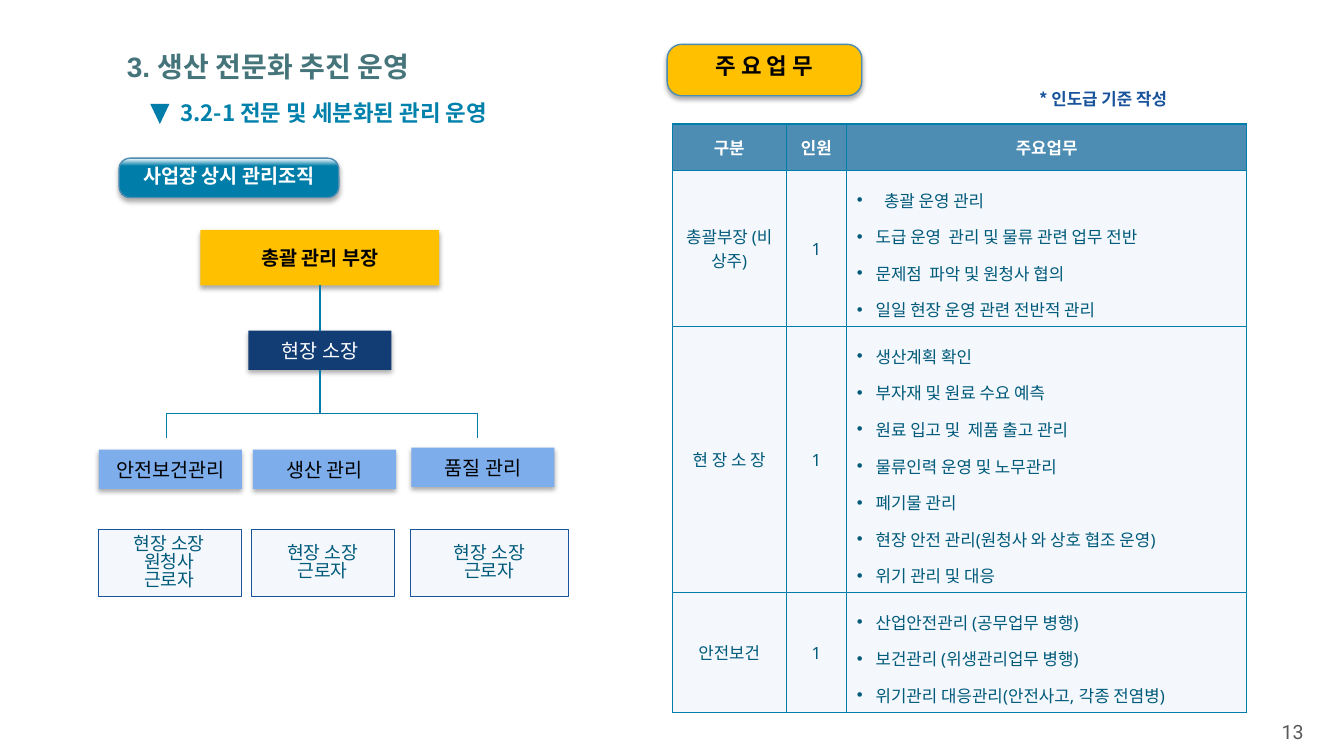
from dataclasses import dataclass

from lxml.etree import SubElement
from pptx import Presentation
from pptx.dml.color import RGBColor
from pptx.enum.shapes import MSO_CONNECTOR, MSO_SHAPE
from pptx.enum.text import MSO_ANCHOR, PP_ALIGN
from pptx.oxml.ns import qn
from pptx.util import Pt


@dataclass(frozen=True)
class Theme:
    teal: str = "007DA9"
    steel: str = "4D8CB3"
    navy: str = "123D74"
    blue: str = "19539C"
    sky: str = "7DADEB"
    pale: str = "F4F7FC"
    amber: str = "FFC000"
    ink: str = "005A7A"
    title: str = "45747A"
    subtitle: str = "0081AB"
    gray: str = "595959"
    black: str = "000000"
    white: str = "FFFFFF"
    korean: str = "Noto Sans CJK KR"
    body: str = "Noto Sans"
    title_size: float = 20
    heading_size: float = 16
    box_size: float = 14
    staff_size: float = 13
    table_size: float = 12


THEME = Theme()

DEPARTMENTS = [  # name, left, top
    ("안전보건관리", 70.6, 321.1),
    ("생산 관리", 180.7, 321.1),
    ("품질 관리", 293.8, 319.7),
]
STAFF = [  # lines, left, width
    (["현장 소장", "원청사", "근로자"], 69.8, 102.2),
    (["현장 소장", "근로자"], 179.3, 102.2),
    (["현장 소장", "근로자"], 293, 113),
]
HEADERS = ["구분", "인원", "주요업무"]
DUTIES = [
    ("총괄부장 (비 상주)", "1", ["총괄 운영 관리", "도급 운영  관리 및 물류 관련 업무 전반",
                          "문제점  파악 및 원청사 협의", "일일 현장 운영 관련 전반적 관리"]),
    ("현 장 소 장", "1", ["생산계획 확인", "부자재 및 원료 수요 예측", "원료 입고 및  제품 출고 관리",
                      "물류인력 운영 및 노무관리", "폐기물 관리",
                      "현장 안전 관리(원청사 와 상호 협조 운영)", "위기 관리 및 대응"]),
    ("안전보건", "1", ["산업안전관리 (공무업무 병행)", "보건관리 (위생관리업무 병행)",
                   "위기관리 대응관리(안전사고, 각종 전염병)"]),
]
COLUMN_WIDTHS = [81.4, 43.2, 285.8]
ROW_HEIGHTS = [33.1, 111.6, 190, 85.7]


def rgb(color):
    return RGBColor.from_string(color)


def write(frame, lines, size, color, bold=False, font=THEME.korean,
          align=PP_ALIGN.CENTER, spacing=None):
    for index, line in enumerate(lines):
        paragraph = frame.paragraphs[0] if index == 0 else frame.add_paragraph()
        paragraph.alignment = align
        if spacing:
            paragraph.line_spacing = spacing
        run = paragraph.add_run()
        run.text = line
        run.font.size = Pt(size)
        run.font.bold = bold
        run.font.name = font
        run.font.color.rgb = rgb(color)
        east_asian = SubElement(run.font._element, qn("a:ea"))
        east_asian.set("typeface", THEME.korean)


def add_label(slide, area, text, size, color, bold=True, font=THEME.korean,
              align=PP_ALIGN.LEFT, anchor=MSO_ANCHOR.TOP, spacing=None):
    frame = slide.shapes.add_textbox(*map(Pt, area)).text_frame
    frame.word_wrap = True
    frame.vertical_anchor = anchor
    write(frame, [text], size, color, bold, font, align, spacing)


def add_shadow(shape):
    effects = shape._element.spPr.find(qn("a:effectLst"))
    shadow = SubElement(effects, qn("a:outerShdw"), blurRad=str(Pt(3.5)),
                        dist=str(Pt(2.2)), dir="5400000", rotWithShape="0")
    color = SubElement(shadow, qn("a:srgbClr"), val=THEME.black)
    SubElement(color, qn("a:alpha"), val="32000")


def add_box(slide, area, fill, line=None, line_width=1, kind=MSO_SHAPE.RECTANGLE, shadow=True):
    shape = slide.shapes.add_shape(kind, *map(Pt, area))
    shape.shadow.inherit = False
    shape.fill.solid()
    shape.fill.fore_color.rgb = rgb(fill)
    if line:
        shape.line.color.rgb = rgb(line)
        shape.line.width = Pt(line_width)
    else:
        shape.line.fill.background()
    if shadow:
        add_shadow(shape)
    shape.text_frame.word_wrap = True
    shape.text_frame.vertical_anchor = MSO_ANCHOR.MIDDLE
    return shape


def add_badge(slide, area, text, size, color, fill):
    badge = add_box(slide, area, fill, THEME.steel, kind=MSO_SHAPE.ROUNDED_RECTANGLE)
    badge.adjustments[0] = 0.28
    write(badge.text_frame, [text], size, color, bold=True, spacing=Pt(13))
    return badge


def add_link(slide, upper, lower=None, end=(0, 0)):
    link = slide.shapes.add_connector(MSO_CONNECTOR.STRAIGHT, 0, 0, *map(Pt, end))
    link.begin_connect(upper, 2)
    if lower is not None:
        link.end_connect(lower, 0)
    link.line.color.rgb = rgb(THEME.teal)
    link.line.width = Pt(1)
    SubElement(link._element.spPr, qn("a:effectLst"))


def add_bracket(slide, left, right, top, bottom):
    builder = slide.shapes.build_freeform(Pt(left), Pt(bottom))
    corners = [(left, top), (right, top), (right, bottom)]
    builder.add_line_segments([(Pt(x), Pt(y)) for x, y in corners], close=False)
    bracket = builder.convert_to_shape()
    bracket.shadow.inherit = False
    bracket.fill.background()
    bracket.line.color.rgb = rgb(THEME.teal)
    bracket.line.width = Pt(1)


def add_bullet(paragraph, indent):
    properties = paragraph._p.get_or_add_pPr()
    properties.set("marL", str(Pt(indent)))
    properties.set("indent", str(-Pt(indent)))
    SubElement(properties, qn("a:buFont"), typeface="Arial")
    SubElement(properties, qn("a:buChar"), char="•")


def style_cell(cell, fill):
    cell.vertical_anchor = MSO_ANCHOR.MIDDLE
    properties = cell._tc.get_or_add_tcPr()
    for side in ("a:lnL", "a:lnR", "a:lnT", "a:lnB"):
        border = SubElement(properties, qn(side), w=str(Pt(1)))
        SubElement(SubElement(border, qn("a:solidFill")), qn("a:srgbClr"), val=THEME.teal)
    cell.fill.solid()
    cell.fill.fore_color.rgb = rgb(fill)


def add_duty_table(slide):
    area = (480.2, 88.6, sum(COLUMN_WIDTHS), sum(ROW_HEIGHTS))
    table = slide.shapes.add_table(len(ROW_HEIGHTS), len(HEADERS), *map(Pt, area)).table
    table.horz_banding = False
    for column, width in zip(table.columns, COLUMN_WIDTHS):
        column.width = Pt(width)
    for row, height in zip(table.rows, ROW_HEIGHTS):
        row.height = Pt(height)
    for index, header in enumerate(HEADERS):
        cell = table.cell(0, index)
        style_cell(cell, THEME.steel)
        write(cell.text_frame, [header], THEME.table_size, THEME.white, True, THEME.body)
    for row, (role, count, duties) in enumerate(DUTIES, start=1):
        for index, lines in enumerate([[role], [count], duties]):
            cell = table.cell(row, index)
            style_cell(cell, THEME.pale)
            is_duty = lines is duties
            write(cell.text_frame, lines, THEME.table_size, THEME.ink, font=THEME.body,
                  align=PP_ALIGN.LEFT if is_duty else PP_ALIGN.CENTER,
                  spacing=1.5 if is_duty else None)
            if is_duty:
                for paragraph in cell.text_frame.paragraphs:
                    add_bullet(paragraph, 13.5)
    # The first duty is set a little further in
    add_bullet_indent = table.cell(1, 2).text_frame.paragraphs[0]._p.pPr
    add_bullet_indent.set("marL", str(Pt(19.5)))
    add_bullet_indent.set("indent", str(-Pt(19.5)))


def add_organization(slide):
    manager = add_box(slide, (143.2, 164.2, 170.6, 39.6), THEME.amber)
    write(manager.text_frame, ["총괄 관리 부장"], THEME.box_size, THEME.black, bold=True)
    site = add_box(slide, (177.4, 236.2, 102.2, 28.1), THEME.navy)
    write(site.text_frame, ["현장 소장"], THEME.box_size, THEME.white)
    add_link(slide, manager, site)
    add_link(slide, site, end=(228.5, 295.2))
    add_bracket(slide, 118.8, 341.3, 295.2, 313)
    for name, left, top in DEPARTMENTS:
        box = add_box(slide, (left, top, 102.2, 28.1), THEME.sky)
        write(box.text_frame, [name], THEME.box_size, THEME.black)
    for lines, left, width in STAFF:
        box = add_box(slide, (left, 378, width, 48.2), THEME.pale, THEME.blue, 0.25, shadow=False)
        write(box.text_frame, lines, THEME.staff_size, THEME.ink, font=THEME.body, spacing=0.84)


def main():
    presentation = Presentation()
    presentation.slide_width, presentation.slide_height = Pt(960), Pt(540)
    slide = presentation.slides.add_slide(presentation.slide_layouts[6])

    # Headings
    add_label(slide, (83.5, 33.1, 817, 31.7), "3. 생산 전문화 추진 운영", THEME.title_size,
              THEME.title, font="Arial", anchor=MSO_ANCHOR.MIDDLE, spacing=0.9)
    marker = add_box(slide, (107.3, 74.2, 13.7, 14.4), THEME.teal,
                     kind=MSO_SHAPE.ISOSCELES_TRIANGLE, shadow=False)
    marker.rotation = 180
    add_label(slide, (121.7, 67, 605.5, 26.6), "3.2-1 전문 및 세분화된 관리 운영",
              THEME.heading_size, THEME.subtitle)
    add_label(slide, (735.1, 59.8, 153.4, 21.6), "* 인도급 기준 작성", THEME.table_size, THEME.blue)

    # Badges
    add_badge(slide, (476.6, 31.7, 139, 36.7), "주 요 업 무", THEME.heading_size,
              THEME.black, THEME.amber)
    badge = add_badge(slide, (85, 113, 157, 28.1), "사업장 상시 관리조직", THEME.box_size,
                      THEME.white, THEME.teal)
    badge.fill.gradient()
    badge.fill.gradient_angle = 270
    for stop, position, color in zip(badge.fill.gradient_stops, (0, 0.2), (THEME.white, THEME.teal)):
        stop.position = position
        stop.color.rgb = rgb(color)

    # Organization chart, duty table and page number
    add_organization(slide)
    add_duty_table(slide)
    add_label(slide, (901.4, 510.5, 43.9, 24.5), "13", THEME.box_size, THEME.gray,
              bold=False, font="Roboto", align=PP_ALIGN.CENTER)
    presentation.save("out.pptx")


if __name__ == "__main__":
    main()
